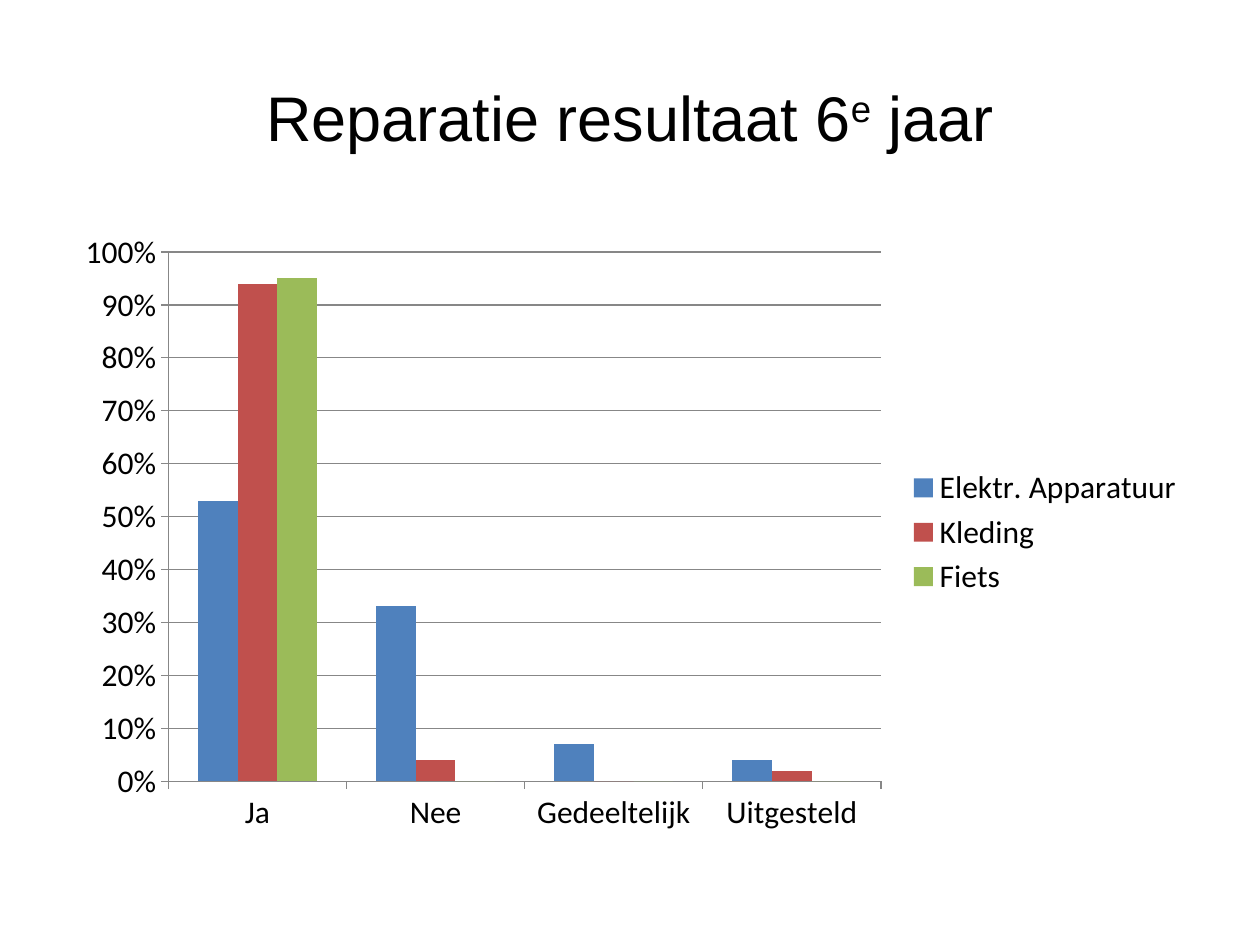
from pptx import Presentation
from pptx.chart.data import CategoryChartData
from pptx.dml.color import RGBColor
from pptx.enum.chart import XL_CHART_TYPE, XL_LEGEND_POSITION, XL_TICK_MARK
from pptx.enum.text import MSO_ANCHOR, PP_ALIGN
from pptx.util import Inches, Pt

COLUMN = XL_CHART_TYPE.COLUMN_CLUSTERED
RIGHT = XL_LEGEND_POSITION.RIGHT
OUT, NONE = XL_TICK_MARK.OUTSIDE, XL_TICK_MARK.NONE
MIDDLE, CENTER = MSO_ANCHOR.MIDDLE, PP_ALIGN.CENTER

COLORS = {
    "text": "000000",
    "line": "878787",
    "blue": "4F81BD",
    "red": "C0504D",
    "green": "9BBB59",
}
ANSWERS = ["Ja", "Nee", "Gedeeltelijk", "Uitgesteld"]
REPAIRS = [
    ("Elektr. Apparatuur", "blue", [0.53, 0.33, 0.07, 0.04]),
    ("Kleding", "red", [0.94, 0.04, 0, 0.02]),
    ("Fiets", "green", [0.95, 0, 0, 0]),
]


def color(name):
    return RGBColor.from_string(COLORS[name])


def style(font, face, size):
    font.name = face
    font.size = Pt(size)
    font.color.rgb = color("text")


def write(para, text, face="Arial", size=36, raised=0):
    run = para.add_run()
    run.text = text
    style(run.font, face, size)
    if raised:
        run._r.get_or_add_rPr().set("baseline", str(raised * 1000))


class Page:
    def __init__(self, deck):
        self.slide = deck.slides.add_slide(deck.slide_layouts[5])
        self.face = "Calibri"
        self.size = 18

    def title(self, parts, left, top, width, height):
        shape = self.slide.shapes.title
        shape.left, shape.top = Inches(left), Inches(top)
        shape.width, shape.height = Inches(width), Inches(height)
        frame = shape.text_frame
        frame.vertical_anchor = MIDDLE
        para = frame.paragraphs[0]
        para.alignment = CENTER
        for text, raised in parts:
            write(para, text, raised=raised)

    def line(self, part):
        part.format.line.color.rgb = color("line")
        part.format.line.width = Pt(0.75)

    def chart(self, names, rows, left, top, width, height):
        data = CategoryChartData(number_format="0%")
        data.categories = names
        for name, _, values in rows:
            data.add_series(name, values)
        chart = self.slide.shapes.add_chart(
            COLUMN, Inches(left), Inches(top), Inches(width), Inches(height), data
        ).chart
        style(chart.font, self.face, self.size)
        chart.has_title = False
        chart.has_legend = True
        chart.legend.position = RIGHT
        chart.legend.include_in_layout = False

        for axis in (chart.category_axis, chart.value_axis):
            axis.major_tick_mark = OUT
            axis.minor_tick_mark = NONE
            self.line(axis)
        scale = chart.value_axis
        scale.minimum_scale, scale.maximum_scale = 0, 1
        scale.major_unit = 0.1
        scale.tick_labels.number_format = "0%"
        scale.tick_labels.number_format_is_linked = False
        scale.has_major_gridlines = True
        self.line(scale.major_gridlines)

        plot = chart.plots[0]
        plot.gap_width = 150
        plot.overlap = 0
        plot.vary_by_categories = False
        for series, (_, tone, _) in zip(plot.series, rows):
            series.format.fill.solid()
            series.format.fill.fore_color.rgb = color(tone)
            series.invert_if_negative = False


def main():
    deck = Presentation()
    deck.slide_width, deck.slide_height = Inches(10), Inches(7.5)
    page = Page(deck)
    page.title(
        [("Reparatie resultaat 6", 0), ("e", 30), (" jaar", 0)], 0.5, 0.3, 9, 1.25
    )
    page.chart(ANSWERS, REPAIRS, 0.5, 1.75, 9, 4.95)
    deck.save("out.pptx")


if __name__ == "__main__":
    main()
